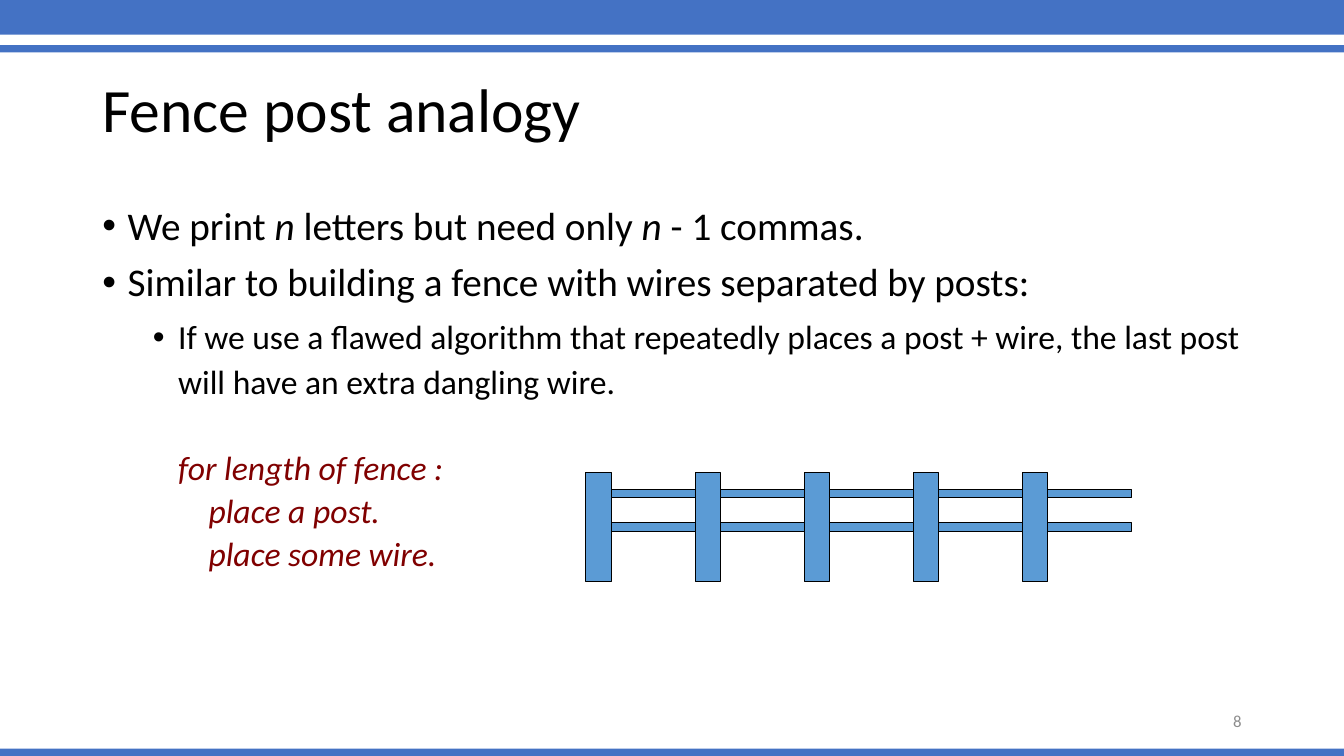
"""Build the fence post analogy slide."""
from dataclasses import dataclass

from lxml.etree import SubElement
from pptx import Presentation
from pptx.dml.color import RGBColor
from pptx.enum.shapes import MSO_SHAPE
from pptx.enum.text import MSO_ANCHOR, MSO_AUTO_SIZE, PP_ALIGN
from pptx.oxml.ns import qn
from pptx.util import Pt

EMU_PER_PX = 9525


@dataclass(frozen=True)
class Theme:
    """Colours, font and type sizes of the slide."""
    font: str = "Calibri"
    text: str = "000000"
    code: str = "800000"
    muted: str = "8C8C8C"
    bar: str = "4472C4"
    fence: str = "5B9BD5"
    title_size: int = 44
    body_size: int = 28
    detail_size: int = 24
    number_size: int = 12


def px(length):
    """Turn pixels into EMU."""
    return length * EMU_PER_PX


def add_text(paragraph, text, *, font, size, color, italic=False):
    """Append a formatted run to a paragraph."""
    run = paragraph.add_run()
    run.text = text
    run.font.name = font
    run.font.size = Pt(size)
    run.font.italic = italic
    run.font.color.rgb = RGBColor.from_string(color)


def set_layout(paragraph, *, level, left, hanging, bullet, before, spacing):
    """Set the indent, bullet and spacing of a paragraph."""
    paragraph.level = level
    paragraph.line_spacing = spacing
    paragraph.space_before = Pt(before)
    properties = paragraph._p.get_or_add_pPr()
    properties.set("marL", str(px(left)))
    properties.set("indent", str(-px(hanging)))
    if bullet:
        SubElement(properties, qn("a:buFont")).set("typeface", "Arial")
        SubElement(properties, qn("a:buChar")).set("char", bullet)
    else:
        SubElement(properties, qn("a:buNone"))


class SlideBuilder:
    """Hold the theme and the current slide."""

    def __init__(self, presentation, theme):
        self.theme = theme
        self.slide = presentation.slides.add_slide(presentation.slide_layouts[1])

    def place(self, shape, left, top, width, height):
        """Move a shape and return its text frame."""
        shape.left, shape.top = px(left), px(top)
        shape.width, shape.height = px(width), px(height)
        frame = shape.text_frame
        frame.word_wrap = True
        frame.auto_size = MSO_AUTO_SIZE.NONE
        return frame

    def rectangle(self, left, top, width, height, *, fill, line=None, parent=None):
        """Draw a plain rectangle on the slide or in a group."""
        shapes = (parent or self.slide).shapes
        shape = shapes.add_shape(
            MSO_SHAPE.RECTANGLE, px(left), px(top), px(width), px(height))
        shape.shadow.inherit = False
        shape.fill.solid()
        shape.fill.fore_color.rgb = RGBColor.from_string(fill)
        if line:
            shape.line.color.rgb = RGBColor.from_string(line)
            shape.line.width = Pt(0.75)
        else:
            shape.line.fill.background()

    def title(self, text, *box):
        """Fill the title placeholder."""
        frame = self.place(self.slide.shapes.title, *box)
        frame.vertical_anchor = MSO_ANCHOR.MIDDLE
        paragraph = frame.paragraphs[0]
        paragraph.alignment = PP_ALIGN.LEFT
        paragraph.line_spacing = 0.9
        add_text(paragraph, text, font=self.theme.font,
                 size=self.theme.title_size, color=self.theme.text)

    def body(self, points, detail, code, *box):
        """Fill the body placeholder with points, a detail and pseudocode."""
        theme = self.theme
        frame = self.place(self.slide.placeholders[1], *box)
        paragraph = frame.paragraphs[0]
        for point in points:
            set_layout(paragraph, level=0, left=24, hanging=24, bullet="•",
                       before=10, spacing=0.9)
            for text, italic in point:
                add_text(paragraph, text, font=theme.font, size=theme.body_size,
                         color=theme.text, italic=italic)
            paragraph = frame.add_paragraph()
        set_layout(paragraph, level=1, left=72, hanging=24, bullet="•",
                   before=5, spacing=1.1)
        add_text(paragraph, detail, font=theme.font, size=theme.detail_size,
                 color=theme.text)
        for text, left, before in code:
            paragraph = frame.add_paragraph()
            set_layout(paragraph, level=1, left=left, hanging=0, bullet=None,
                       before=before, spacing=0.9)
            add_text(paragraph, text, font=theme.font, size=theme.detail_size,
                     color=theme.code, italic=True)

    def fence(self, left, top, *, sections):
        """Draw a fence in which every post is followed by two wires."""
        post_width, post_height, wire_length, wire_height = 24, 104, 80, 8
        style = {"fill": self.theme.fence, "line": self.theme.text,
                 "parent": self.slide.shapes.add_group_shape()}
        for section in range(sections):
            post_left = left + section * (post_width + wire_length)
            self.rectangle(post_left, top, post_width, post_height, **style)
            for drop in (16, 48):
                self.rectangle(post_left + post_width, top + drop,
                               wire_length, wire_height, **style)

    def page_number(self, number, *box):
        """Write the page number."""
        shape = self.slide.shapes.add_textbox(0, 0, 0, 0)
        frame = self.place(shape, *box)
        frame.vertical_anchor = MSO_ANCHOR.MIDDLE
        paragraph = frame.paragraphs[0]
        paragraph.alignment = PP_ALIGN.RIGHT
        add_text(paragraph, str(number), font=self.theme.font,
                 size=self.theme.number_size, color=self.theme.muted)


def main():
    """Create and save the presentation."""
    presentation = Presentation()
    presentation.slide_width, presentation.slide_height = px(1280), px(720)
    theme = Theme()
    builder = SlideBuilder(presentation, theme)
    for top, height in ((-3, 36), (43, 7), (713, 7)):
        builder.rectangle(0, top, 1280, height, fill=theme.bar)
    builder.title("Fence post analogy", 88, 38, 1104, 139)
    builder.body(
        [
            [("We print ", False), ("n", True), (" letters but need only ", False),
             ("n", True), (" - 1 commas.", False)],
            [("Similar to building a fence with wires separated by posts:", False)],
        ],
        "If we use a flawed algorithm that repeatedly places a post + wire, "
        "the last post will have an extra dangling wire.",
        [("for length of fence :", 72, 36), ("place a post.", 101, 5),
         ("place some wire.", 101, 5)],
        88, 192, 1104, 457)
    builder.fence(558, 450, sections=5)
    builder.page_number(8, 904, 667, 288, 38)
    presentation.save("out.pptx")


if __name__ == "__main__":
    main()
